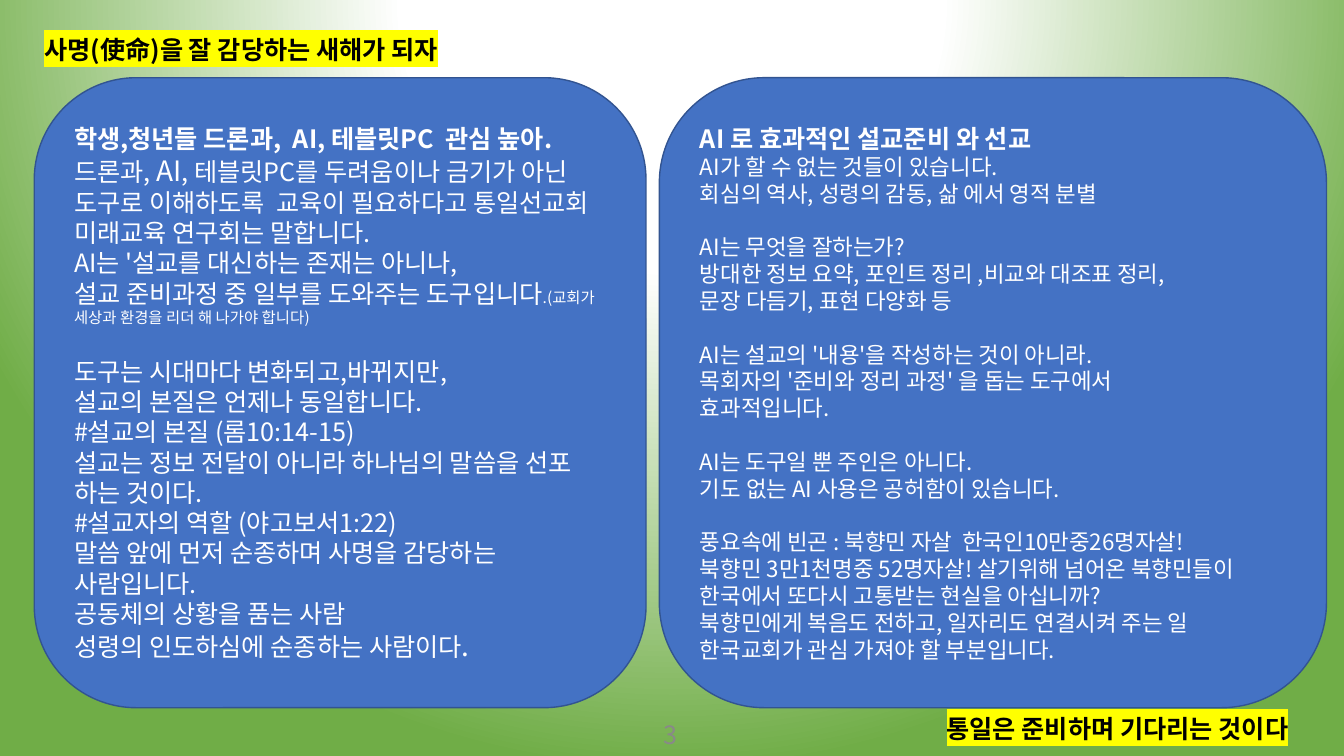
import pptx
import pptx.dml.color
import pptx.enum.shapes
import pptx.enum.text
import pptx.oxml
import pptx.oxml.ns
import pptx.util
from lxml import etree

Pt = pptx.util.Pt
qn = pptx.oxml.ns.qn
RGBColor = pptx.dml.color.RGBColor

FONT = "Noto Sans CJK KR"
BLACK = RGBColor(0x00, 0x00, 0x00)
WHITE = RGBColor(0xFF, 0xFF, 0xFF)
BLUE = RGBColor(0x44, 0x72, 0xC4)
DARK_BLUE = RGBColor(0x32, 0x54, 0x91)
GREY = RGBColor(0x89, 0x89, 0x89)
YELLOW = RGBColor(0xFF, 0xFF, 0x00)
GREEN = RGBColor(0x70, 0xAD, 0x47)

# Each card is a list of groups set apart by a gap; a group is a list of lines.
# A line is a string, or a list of (text, size) runs.
STUDENT_GROUPS = [
    [
        "학생,청년들 드론과,  AI, 테블릿PC  관심 높아.",
        [("드론과, ", 18), ("AI", 20), (", 테블릿PC를 두려움이나 금기가 아닌", 18)],
        "도구로 이해하도록  교육이 필요하다고 통일선교회 미래교육 연구회는 말합니다.",
        "AI는 '설교를 대신하는 존재는 아니나,",
        [("설교 준비과정 중 일부를 도와주는 도구입니다", 18),
         (".(교회가 세상과 환경을 리더 해 나가야 합니다)", 11)],
    ],
    [
        "도구는 시대마다 변화되고,바뀌지만,",
        "설교의 본질은 언제나 동일합니다.",
        "#설교의 본질 (롬10:14-15)",
        "설교는 정보 전달이 아니라 하나님의 말씀을 선포 하는 것이다.",
        "#설교자의 역할 (야고보서1:22)",
        "말씀 앞에 먼저 순종하며 사명을 감당하는 사람입니다.",
        "공동체의 상황을 품는 사람",
        [("성령의 인도하심에 순종하는 사람이다", 18), (".", 20)],
    ],
]
SERMON_GROUPS = [
    [
        [("AI 로 효과적인 설교준비 와 선교", 18)],
        "AI가 할 수 없는 것들이 있습니다.",
        "회심의 역사, 성령의 감동, 삶 에서 영적 분별",
    ],
    [
        "AI는 무엇을 잘하는가?",
        "방대한 정보 요약, 포인트 정리 ,비교와 대조표 정리,",
        "문장 다듬기, 표현 다양화 등",
    ],
    [
        "AI는 설교의 '내용'을 작성하는 것이 아니라.",
        "목회자의 '준비와 정리 과정' 을 돕는 도구에서",
        "효과적입니다.",
    ],
    [
        "AI는 도구일 뿐 주인은 아니다.",
        "기도 없는 AI 사용은 공허함이 있습니다.",
    ],
    [
        "풍요속에 빈곤 : 북향민 자살  한국인10만중26명자살!",
        "북향민 3만1천명중 52명자살! 살기위해 넘어온 북향민들이 한국에서 또다시 고통받는 현실을 아십니까?",
        "북향민에게 복음도 전하고, 일자리도 연결시켜 주는 일",
        "한국교회가 관심 가져야 할 부분입니다.",
    ],
]


def format_run(run, size, color, bold=False):
    run.font.size = Pt(size)
    run.font.bold = bold
    run.font.color.rgb = color
    run.font.name = FONT
    latin = run.font._element.find(qn("a:latin"))
    east_asian = etree.Element(qn("a:ea"), typeface=FONT)
    latin.addnext(east_asian)


presentation = pptx.Presentation()
presentation.slide_width = Pt(960)
presentation.slide_height = Pt(540)
slide = presentation.slides.add_slide(presentation.slide_layouts[6])

# Background: white glow from the top, green towards the corners
slide.background.fill.solid()
solid_fill = slide.element.find(".//" + qn("p:bgPr")).find(qn("a:solidFill"))
stops = "".join(
    f'<a:gs pos="{percent * 1000}"><a:srgbClr val="{color}"/></a:gs>'
    for percent, color in [(0, WHITE), (35, WHITE), (100, GREEN)]
)
gradient = pptx.oxml.parse_xml(
    f'<a:gradFill {pptx.oxml.ns.nsdecls("a")} rotWithShape="1"><a:gsLst>{stops}</a:gsLst>'
    '<a:path path="circle"><a:fillToRect l="50000" t="-80000" r="50000" b="180000"/></a:path>'
    "</a:gradFill>"
)
solid_fill.getparent().replace(solid_fill, gradient)

# Highlighted captions
for left, top, width, caption in [
    (24.5, 21, 492, "사명(使命)을 잘 감당하는 새해가 되자"),
    (669, 506, 290, "통일은 준비하며 기다리는 것이다"),
]:
    box = slide.shapes.add_textbox(Pt(left), Pt(top), Pt(width), Pt(29))
    box.text_frame.word_wrap = True
    box.text_frame.text = caption
    run = box.text_frame.paragraphs[0].runs[0]
    format_run(run, 18, BLACK, bold=True)
    highlight = etree.Element(qn("a:highlight"))
    etree.SubElement(highlight, qn("a:srgbClr"), val=str(YELLOW))
    run.font._element.find(qn("a:solidFill")).addnext(highlight)

# Text cards
for left, width, body_size, gap, groups in [
    (471, 476.5, 16, 19, SERMON_GROUPS),
    (24.5, 437, 18, 21, STUDENT_GROUPS),
]:
    card = slide.shapes.add_shape(
        pptx.enum.shapes.MSO_SHAPE.ROUNDED_RECTANGLE, Pt(left), Pt(55.5), Pt(width), Pt(450)
    )
    card.shadow.inherit = False
    card.fill.solid()
    card.fill.fore_color.rgb = BLUE
    card.line.color.rgb = DARK_BLUE
    card.line.width = Pt(1)
    text_frame = card.text_frame
    text_frame.word_wrap = True
    text_frame.vertical_anchor = pptx.enum.text.MSO_ANCHOR.MIDDLE
    for group_index, group in enumerate(groups):
        for line_index, line in enumerate(group):
            is_heading = group_index == line_index == 0
            paragraph = text_frame.paragraphs[0] if is_heading else text_frame.add_paragraph()
            paragraph.alignment = pptx.enum.text.PP_ALIGN.LEFT
            if group_index > 0 and line_index == 0:
                paragraph.space_before = Pt(gap)
            for text, size in [(line, body_size)] if isinstance(line, str) else line:
                run = paragraph.add_run()
                run.text = text
                format_run(run, size, WHITE, bold=is_heading)

# Slide number
number_box = slide.shapes.add_textbox(Pt(449), Pt(510), Pt(60), Pt(30))
number_box.text_frame.word_wrap = True
number_box.text_frame.text = "3"
paragraph = number_box.text_frame.paragraphs[0]
paragraph.alignment = pptx.enum.text.PP_ALIGN.CENTER
format_run(paragraph.runs[0], 18, GREY)

presentation.save("out.pptx")
